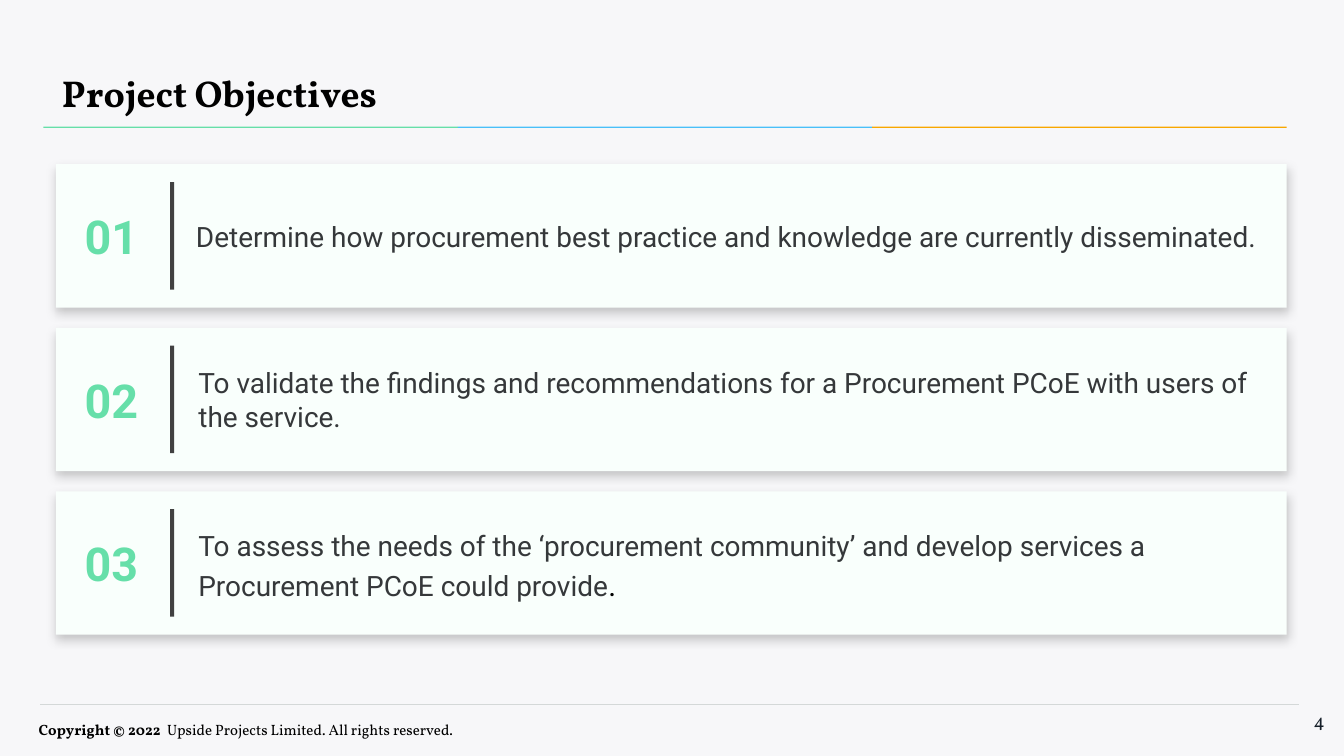
from lxml.etree import SubElement
from pptx import Presentation
from pptx.dml.color import RGBColor
from pptx.enum.shapes import MSO_CONNECTOR, MSO_SHAPE
from pptx.enum.text import MSO_ANCHOR, PP_ALIGN
from pptx.oxml.ns import qn
from pptx.util import Pt

COLORS = {
    "background": "F7F7F9", "black": "000000", "green": "66DFA9",
    "blue": "49C0F9", "amber": "F8A700", "card": "F9FFFC",
    "body": "35383A", "bar": "414141", "rule": "D4D8D8", "number": "151E28",
}
HEAD, BODY = "Vollkorn", "Roboto"

# Number, left inset, line spacing, (text, size, colour) runs
OBJECTIVES = [
    ("01", 75, 1, [("Determine how procurement best practice and knowledge "
                    "are currently disseminated.", 15, "body")]),
    ("02", 76.3, 1, [("To validate the findings and recommendations for a "
                      "Procurement PCoE with users of the service.", 15, "body")]),
    ("03", 76.3, 1.15, [("To assess the needs of the ‘procurement community’ and develop "
                         "services a Procurement PCoE could provide", 15, "body"),
                        (".", 16, "black")]),
]


def rgb(name):
    return RGBColor.from_string(COLORS[name])


def set_font(font, name, size, color, bold=False):
    font.name, font.size, font.bold = name, Pt(size), bold
    font.color.rgb = rgb(color)


def set_frame(tf, left, top, right, bottom, anchor=MSO_ANCHOR.TOP):
    tf.word_wrap = True
    tf.vertical_anchor = anchor
    tf.margin_left, tf.margin_top = Pt(left), Pt(top)
    tf.margin_right, tf.margin_bottom = Pt(right), Pt(bottom)


def add_rect(slide, x, y, w, h, color):
    sp = slide.shapes.add_shape(MSO_SHAPE.RECTANGLE, Pt(x), Pt(y), Pt(w), Pt(h))
    sp.shadow.inherit = False
    sp.fill.solid()
    sp.fill.fore_color.rgb = rgb(color)
    sp.line.fill.background()
    return sp


def add_text(slide, x, y, w, h, margins, anchor=MSO_ANCHOR.TOP):
    tf = slide.shapes.add_textbox(Pt(x), Pt(y), Pt(w), Pt(h)).text_frame
    set_frame(tf, *margins, anchor)
    return tf.paragraphs[0]


def add_soft_shadow(sp):
    effects = sp._element.spPr.find(qn("a:effectLst"))
    shadow = SubElement(effects, qn("a:outerShdw"), blurRad=str(Pt(5.6)),
                        dist=str(Pt(2.2)), dir="5400000", algn="t", rotWithShape="0")
    color = SubElement(shadow, qn("a:srgbClr"), val=COLORS["black"])
    SubElement(color, qn("a:alpha"), val="20000")


def add_header(slide, x, y, w, h):
    # Title
    title = slide.shapes.title
    title.left, title.top, title.width, title.height = Pt(x + 7), Pt(y), Pt(237.6), Pt(h)
    set_frame(title.text_frame, 2.9, 2.9, 2.9, 2.9)
    p = title.text_frame.paragraphs[0]
    p.text = "Project Objectives"
    p.alignment = PP_ALIGN.LEFT
    set_font(p.font, HEAD, 20, "black", True)
    # Three-colour underline
    part = w / 3
    for i, color in enumerate(("green", "blue", "amber")):
        add_rect(slide, x + i * part, y + 33.2, part, 0.8, color)


def add_card(slide, x, y, w, h, number, inset, spacing, runs):
    # Panel with its statement
    card = add_rect(slide, x, y, w, h, "card")
    add_soft_shadow(card)
    set_frame(card.text_frame, inset, 7.2, 7.2, 7.2, MSO_ANCHOR.MIDDLE)
    p = card.text_frame.paragraphs[0]
    p.alignment = PP_ALIGN.LEFT
    p.line_spacing = spacing
    for text, size, color in runs:
        r = p.add_run()
        r.text = text
        set_font(r.font, BODY, size, color)
    # Number and divider
    inner_y, inner_h = y + 9.6, h - 19.2
    p = add_text(slide, x + 8.2, inner_y, 48, inner_h, [7.2] * 4, MSO_ANCHOR.MIDDLE)
    p.text = number
    set_font(p.font, BODY, 25, "green", True)
    add_rect(slide, x + 61.2, inner_y, 2.2, inner_h, "bar")


def add_footer(slide, x, y, w):
    # Rule
    line = slide.shapes.add_connector(MSO_CONNECTOR.STRAIGHT, Pt(x), Pt(y), Pt(x + w), Pt(y))
    line.line.color.rgb = rgb("rule")
    line.line.width = Pt(0.75)
    SubElement(line._element.spPr, qn("a:effectLst"))
    # Copyright
    p = add_text(slide, x - 7.9, y + 3.6, 433.4, 17.3, (7.2, 3.6, 7.2, 3.6))
    p.line_spacing = 1.2
    for text, bold in (("Copyright © 2022  ", True),
                       ("Upside Projects Limited. All rights reserved.", False)):
        r = p.add_run()
        r.text = text
        set_font(r.font, HEAD, 8, "black", bold)
    # Page number
    p = add_text(slide, x + w - 22.5, y - 3.6, 43.2, 31, [7.2] * 4)
    p.text = "4"
    p.alignment = PP_ALIGN.RIGHT
    set_font(p.font, HEAD, 10, "number")


def main():
    prs = Presentation()
    prs.slide_width, prs.slide_height = Pt(720), Pt(405)
    slide = prs.slides.add_slide(prs.slide_layouts[5])
    slide.background.fill.solid()
    slide.background.fill.fore_color.rgb = rgb("background")
    add_header(slide, 23.3, 34.6, 666, 27.4)
    for i, objective in enumerate(OBJECTIVES):
        add_card(slide, 30, 88 + i * 87.6, 659.4, 76.8, *objective)
    add_footer(slide, 21.5, 377.3, 674.5)
    prs.save("out.pptx")


if __name__ == "__main__":
    main()
